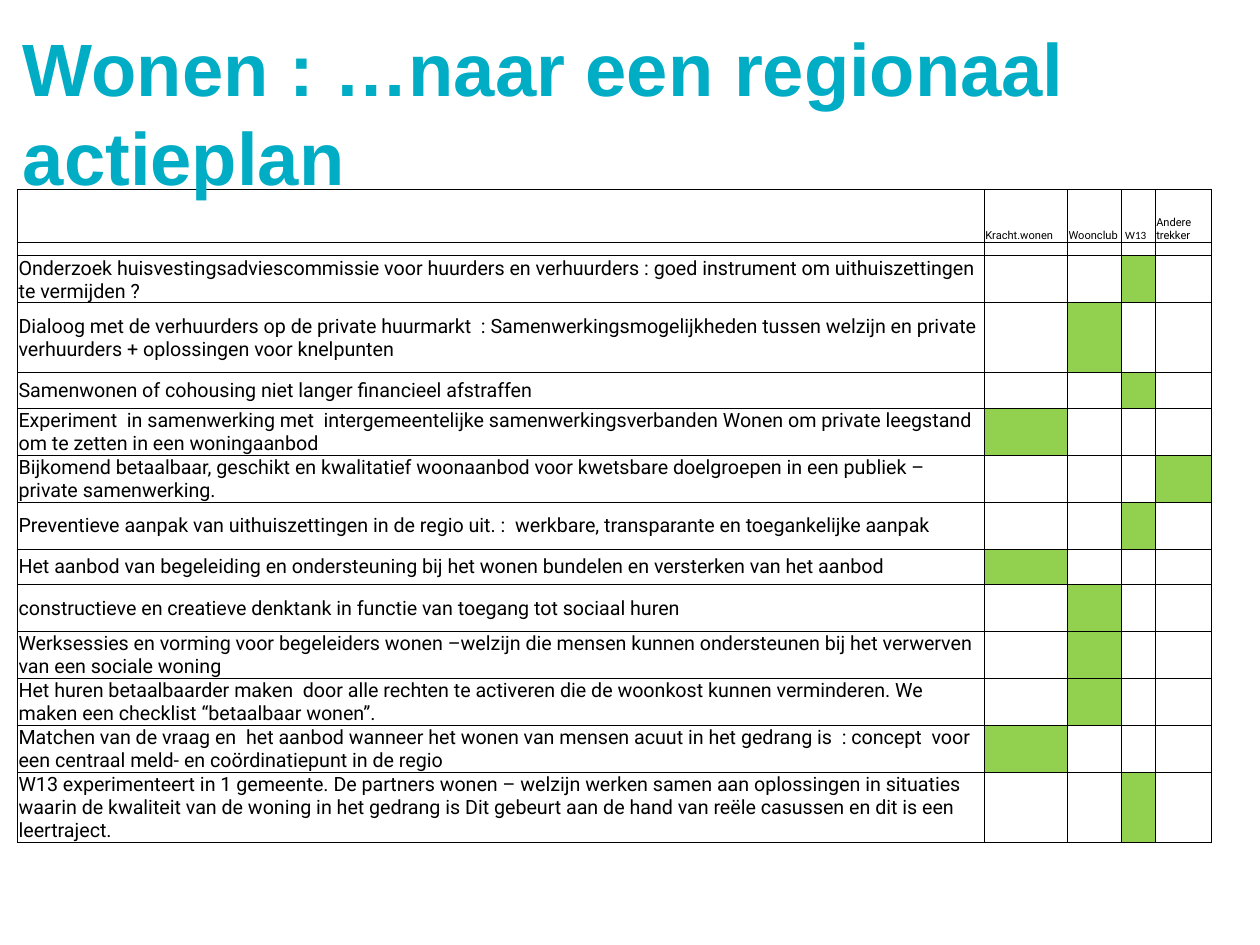
import pptx
import pptx.dml.color
import pptx.enum.text
import pptx.oxml.ns
import pptx.util
from lxml import etree

EMU_PER_PX = 9144  # 100 px to the inch
TEAL, GREEN, BLACK = "00ADC5", "92D050", "000000"
MIDDLE = pptx.enum.text.MSO_ANCHOR.MIDDLE
BOTTOM = pptx.enum.text.MSO_ANCHOR.BOTTOM

PARTNERS = ["Kracht.wonen", "Woonclub", "W13", "Andere trekker"]
COLUMN_WIDTHS = [1091, 94, 61, 38, 63]
HEADER_HEIGHT, SPACER_HEIGHT = 60, 15

# Each action: row height, wording, partner who leads it
ACTIONS = [
    (53, "Onderzoek huisvestingsadviescommissie voor huurders en verhuurders : goed instrument "
         "om uithuiszettingen te vermijden ?", "W13"),
    (79, "Dialoog met de verhuurders op de private huurmarkt  : Samenwerkingsmogelijkheden tussen "
         "welzijn en private verhuurders + oplossingen voor knelpunten", "Woonclub"),
    (40, "Samenwonen of cohousing niet langer financieel afstraffen", "W13"),
    (53, "Experiment  in samenwerking met  intergemeentelijke samenwerkingsverbanden Wonen om "
         "private leegstand om te zetten in een woningaanbod", "Kracht.wonen"),
    (53, "Bijkomend betaalbaar, geschikt en kwalitatief woonaanbod voor kwetsbare doelgroepen in "
         "een publiek –private samenwerking.", "Andere trekker"),
    (53, "Preventieve aanpak van uithuiszettingen in de regio uit. :  werkbare, transparante en "
         "toegankelijke aanpak", "W13"),
    (40, "Het aanbod van begeleiding en ondersteuning bij het wonen bundelen en versterken van "
         "het aanbod", "Kracht.wonen"),
    (53, "constructieve en creatieve denktank in functie van toegang tot sociaal huren", "Woonclub"),
    (53, "Werksessies en vorming voor begeleiders wonen –welzijn die mensen kunnen ondersteunen "
         "bij het verwerven van een sociale woning", "Woonclub"),
    (53, "Het huren betaalbaarder maken  door alle rechten te activeren die de woonkost kunnen "
         "verminderen. We maken een checklist “betaalbaar wonen”.", "Woonclub"),
    (53, "Matchen van de vraag en  het aanbod wanneer het wonen van mensen acuut in het gedrang "
         "is  : concept  voor een centraal meld- en coördinatiepunt in de regio", "Kracht.wonen"),
    (79, "W13 experimenteert in 1 gemeente. De partners wonen – welzijn werken samen aan "
         "oplossingen in situaties waarin de kwaliteit van de woning in het gedrang is Dit gebeurt "
         "aan de hand van reële casussen en dit is een leertraject.", "W13"),
]


def px(length):
    return pptx.util.Emu(length * EMU_PER_PX)


def color(value):
    return pptx.dml.color.RGBColor.from_string(value)


class SlideBuilder:
    def __init__(self, slide, font="Roboto"):
        self.slide = slide
        self.font = font

    def format_runs(self, text_frame, size, fill, font=None, bold=False):
        for paragraph in text_frame.paragraphs:
            for run in paragraph.runs:
                run.font.name = font or self.font
                run.font.size = pptx.util.Pt(size)
                run.font.bold = bold
                run.font.color.rgb = color(fill)

    def title(self, left, top, width, height, text):
        box = self.slide.shapes.add_textbox(px(left), px(top), px(width), px(height))
        frame = box.text_frame
        frame.word_wrap = True
        frame.vertical_anchor = MIDDLE
        frame.margin_left = frame.margin_right = px(6)
        frame.margin_top = frame.margin_bottom = px(6)
        frame.text = text
        self.format_runs(frame, 60.3, TEAL, "Arial", bold=True)

    def table(self, left, top, widths, heights):
        shape = self.slide.shapes.add_table(
            len(heights), len(widths), px(left), px(top), px(sum(widths)), px(sum(heights)))
        table = shape.table
        table.first_row = table.horz_banding = False
        for column, width in zip(table.columns, widths):
            column.width = px(width)
        for row, height in zip(table.rows, heights):
            row.height = px(height)
        for cell in table.iter_cells():
            self.plain_cell(cell)
        return table

    def plain_cell(self, cell):
        cell.margin_left = cell.margin_right = cell.margin_top = px(1)
        cell.margin_bottom = 0
        # Thin black border on every side
        properties = cell._tc.get_or_add_tcPr()
        for side in ("a:lnL", "a:lnR", "a:lnT", "a:lnB"):
            line = etree.SubElement(properties, pptx.oxml.ns.qn(side), w="12700")
            fill = etree.SubElement(line, pptx.oxml.ns.qn("a:solidFill"))
            etree.SubElement(fill, pptx.oxml.ns.qn("a:srgbClr"), val=BLACK)
        cell.fill.background()
        # Small size for empty cells, so that the spacer row stays low
        paragraph = cell.text_frame.paragraphs[0]
        etree.SubElement(paragraph._p, pptx.oxml.ns.qn("a:endParaRPr"), sz="600")

    def cell_text(self, cell, text, size, anchor, font=None):
        cell.text_frame.text = text
        cell.vertical_anchor = anchor
        self.format_runs(cell.text_frame, size, BLACK, font)

    def mark(self, cell):
        cell.fill.solid()
        cell.fill.fore_color.rgb = color(GREEN)


def main():
    presentation = pptx.Presentation()
    presentation.slide_width, presentation.slide_height = px(1422), px(1067)
    builder = SlideBuilder(presentation.slides.add_slide(presentation.slide_layouts[6]))

    # Action table: header, spacer row, one row per action
    heights = [HEADER_HEIGHT, SPACER_HEIGHT] + [action[0] for action in ACTIONS]
    table = builder.table(20, 214, COLUMN_WIDTHS, heights)
    for column, partner in enumerate(PARTNERS, start=1):
        font = "Calibri" if partner == "W13" else None
        builder.cell_text(table.cell(0, column), partner, 9, BOTTOM, font)
    table.cell(0, PARTNERS.index("W13") + 1).margin_left = px(4)
    for row, (_, wording, leader) in enumerate(ACTIONS, start=2):
        builder.cell_text(table.cell(row, 0), wording, 16, MIDDLE)
        builder.mark(table.cell(row, PARTNERS.index(leader) + 1))

    # Title, in front of the table
    builder.title(20, 49, 1347, 154, "Wonen : …naar een regionaal actieplan")

    presentation.save("out.pptx")


if __name__ == "__main__":
    main()
